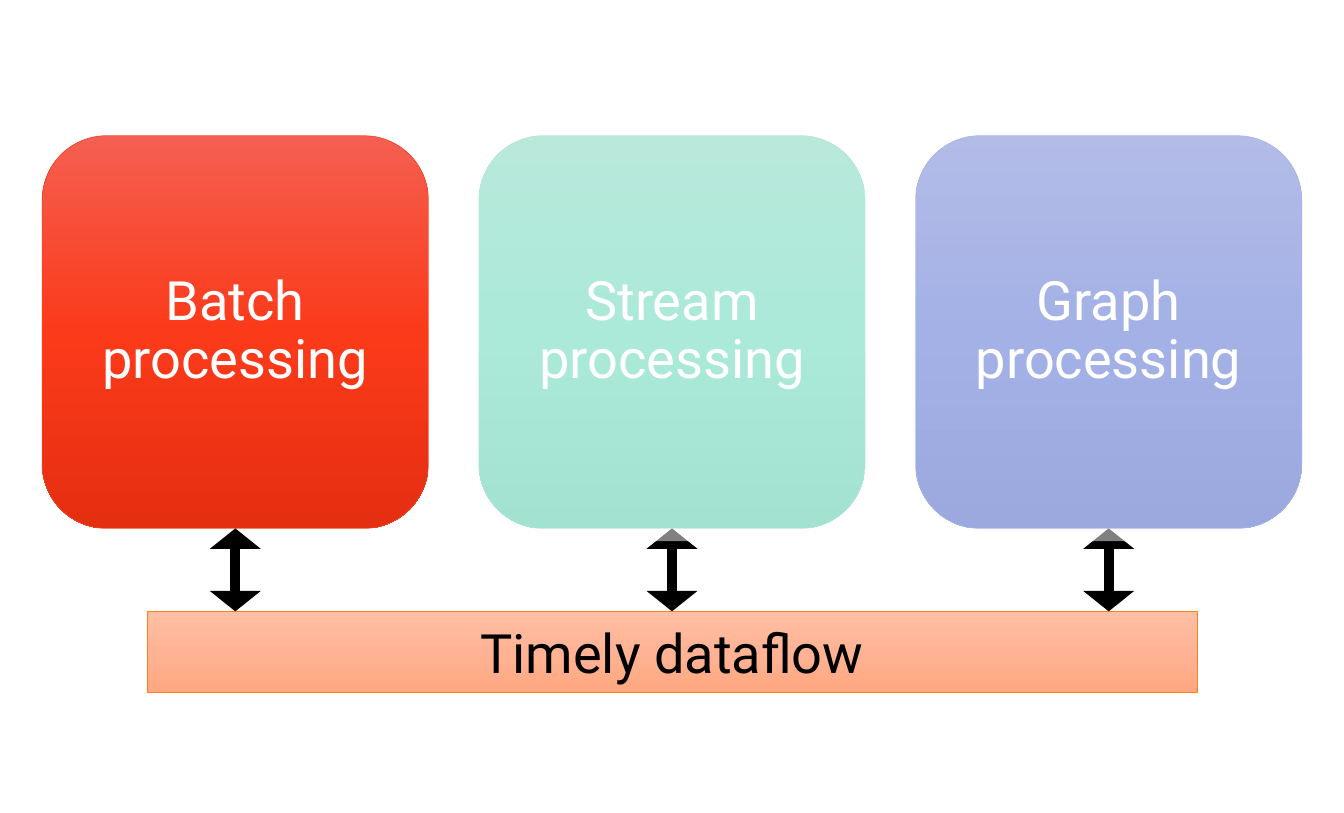
from copy import deepcopy
from dataclasses import dataclass

from lxml.etree import SubElement
from pptx import Presentation
from pptx.dml.color import RGBColor
from pptx.enum.shapes import MSO_CONNECTOR, MSO_SHAPE
from pptx.enum.text import MSO_ANCHOR, PP_ALIGN
from pptx.oxml.ns import qn
from pptx.util import Cm, Pt


@dataclass(frozen=True)
class Theme:
    font: str = "Roboto"
    text_size: int = 48
    white: str = "FFFFFF"
    black: str = "000000"
    outline_width: float = 0.5
    arrow_width: float = 9
    # Gradient stops from top to bottom, then the outline
    red: tuple = ("F55F51", "FB3A1A", "E52F11", "F14124")
    green: tuple = ("73D4B8", "57D4B2", "47C3A1", "5DCEAF")
    blue: tuple = ("687ACF", "4863CE", "3954BE", "4E67C8")
    orange: tuple = ("FFBFA3", "FFB394", "FFA881", "FF8021")


THEME = Theme()

# Layout in centimetres
SLIDE_WIDTH, SLIDE_HEIGHT = 42.01, 25.4
BOX_LEFT, BOX_TOP, BOX_WIDTH, BOX_HEIGHT = 1.32, 4.24, 12.07, 12.27
BOX_STEP = 13.65
BAR_LEFT, BAR_TOP, BAR_WIDTH, BAR_HEIGHT = 4.6, 19.1, 32.82, 2.54
VEIL = (14.17, 2.74, 33.88, 14.17)

PROCESSING_KINDS = (
    ("Batch processing", THEME.red),
    ("Stream processing", THEME.green),
    ("Graph processing", THEME.blue),
)


def colour(value):
    return RGBColor.from_string(value)


def write_text(shape, text, *, color, spacing=1.0, margin=None):
    frame = shape.text_frame
    frame.word_wrap = True
    frame.vertical_anchor = MSO_ANCHOR.MIDDLE
    if margin is not None:
        frame.margin_left = frame.margin_right = Cm(margin)
        frame.margin_top = frame.margin_bottom = Cm(margin)
    para = frame.paragraphs[0]
    para.alignment = PP_ALIGN.CENTER
    para.line_spacing = spacing
    span = para.add_run()
    span.text = text
    span.font.name = THEME.font
    span.font.size = Pt(THEME.text_size)
    span.font.color.rgb = colour(color)


def fill_gradient(shape, colors):
    """Fill from top to bottom with evenly spaced colours."""
    shape.fill.gradient()
    shape.fill.gradient_angle = 270
    stop_list = shape._element.spPr.find(qn("a:gradFill")).find(qn("a:gsLst"))
    while len(stop_list) < len(colors):
        stop_list.append(deepcopy(stop_list[0]))
    for index, (stop, value) in enumerate(zip(shape.fill.gradient_stops, colors)):
        stop.position = index / (len(colors) - 1)
        stop.color.rgb = colour(value)


def add_block(page, kind, place, palette):
    box = page.shapes.add_shape(kind, *map(Cm, place))
    box.shadow.inherit = False
    *stops, outline = palette
    fill_gradient(box, stops)
    box.line.color.rgb = colour(outline)
    box.line.width = Pt(THEME.outline_width)
    return box


def add_double_arrow(page, x, top, bottom):
    arrow = page.shapes.add_connector(
        MSO_CONNECTOR.STRAIGHT, Cm(x), Cm(top), Cm(x), Cm(bottom))
    arrow.line.color.rgb = colour(THEME.black)
    arrow.line.width = Pt(THEME.arrow_width)
    outline = arrow.line._get_or_add_ln()
    for end in ("a:headEnd", "a:tailEnd"):
        SubElement(outline, qn(end), type="triangle", w="lg", len="sm")
    SubElement(arrow._element.spPr, qn("a:effectLst"))


def add_veil(page, place, opacity):
    veil = page.shapes.add_shape(MSO_SHAPE.RECTANGLE, *map(Cm, place))
    veil.shadow.inherit = False
    veil.line.fill.background()
    veil.fill.solid()
    veil.fill.fore_color.rgb = colour(THEME.white)
    fill_color = veil._element.spPr.find(qn("a:solidFill"))[0]
    SubElement(fill_color, qn("a:alpha"), val=str(opacity * 1000))


def main():
    deck = Presentation()
    deck.slide_width, deck.slide_height = Cm(SLIDE_WIDTH), Cm(SLIDE_HEIGHT)
    page = deck.slides.add_slide(deck.slide_layouts.get_by_name("Blank"))
    lefts = [BOX_LEFT + index * BOX_STEP for index in range(len(PROCESSING_KINDS))]

    # Processing kinds
    for left, (label, palette) in zip(lefts, PROCESSING_KINDS):
        box = add_block(page, MSO_SHAPE.ROUNDED_RECTANGLE,
                        (left, BOX_TOP, BOX_WIDTH, BOX_HEIGHT), palette)
        write_text(box, label, color=THEME.white, spacing=0.9, margin=0)

    # Shared foundation
    bar = add_block(page, MSO_SHAPE.RECTANGLE,
                    (BAR_LEFT, BAR_TOP, BAR_WIDTH, BAR_HEIGHT), THEME.orange)
    write_text(bar, "Timely dataflow", color=THEME.black)

    # Arrows between each kind and the foundation
    for left in lefts:
        add_double_arrow(page, left + BOX_WIDTH / 2, BOX_TOP + BOX_HEIGHT, BAR_TOP)

    # Veil that dims all but the first kind
    add_veil(page, VEIL, opacity=50)

    deck.save("out.pptx")


if __name__ == "__main__":
    main()
